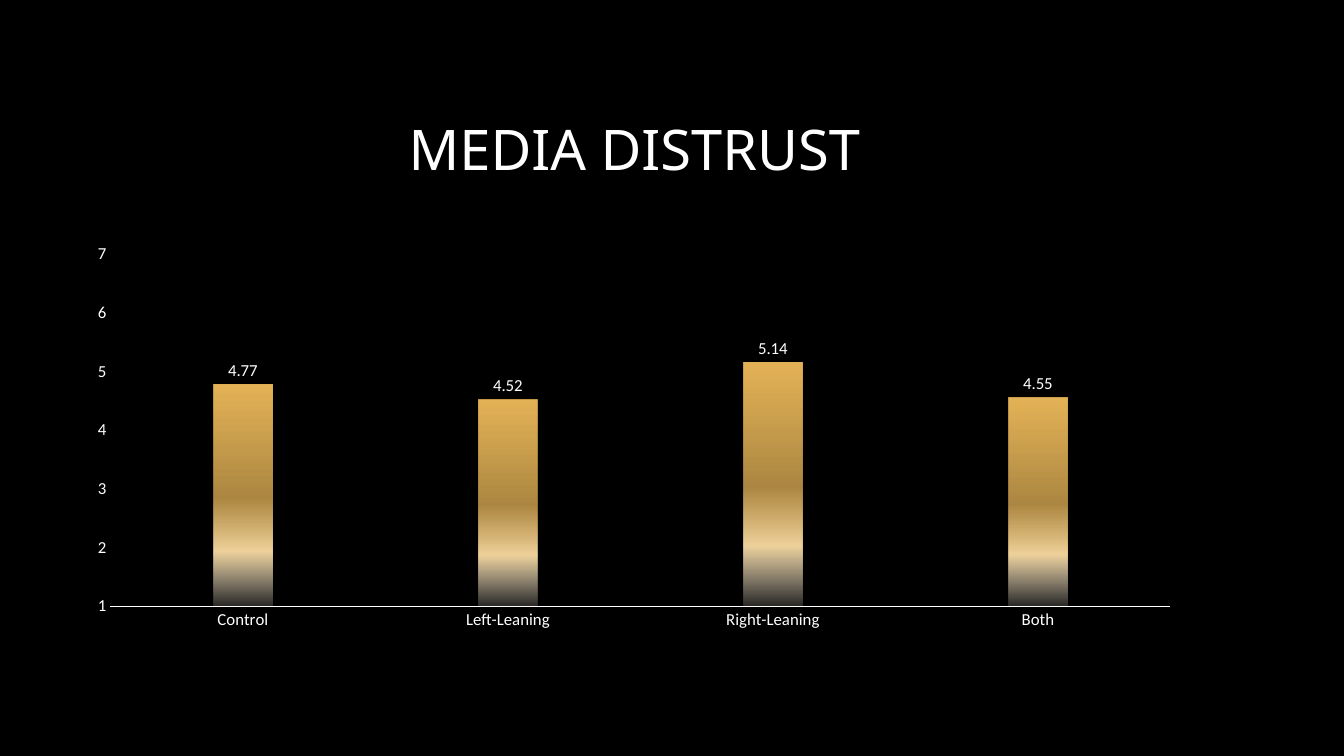
from pptx import Presentation
from pptx.chart.data import CategoryChartData
from pptx.dml.color import RGBColor
from pptx.enum.chart import XL_CHART_TYPE, XL_LABEL_POSITION, XL_TICK_MARK
from pptx.enum.text import MSO_ANCHOR, PP_ALIGN
from pptx.oxml import parse_xml
from pptx.util import Inches, Pt

WHITE = "FFFFFF"
DISTRUST = {"Control": 4.77, "Left-Leaning": 4.52, "Right-Leaning": 5.14, "Both": 4.55}
# Position, colour and opacity, all but the colour in percent
GOLD_STOPS = [(0, "E5B458", 100), (51, "E5B458", 75), (75, "EFD29B", 100), (100, "FAF0DE", 15)]
DRAWING = "http://schemas.openxmlformats.org/drawingml/2006/main"


def color(hex_string):
    return RGBColor.from_string(hex_string)


def style_font(font, name, size):
    font.name = name
    font.size = Pt(size)
    font.color.rgb = color(WHITE)


def fill_with_gradient(fill_format, stops):
    """Fill from top to bottom with stops that may be transparent."""
    fill_format.gradient()
    fill_format.gradient_angle = 270
    first_stop = fill_format.gradient_stops[0]
    first_stop.color.rgb = color(stops[0][1])
    stop_list = fill_format._fill._gradFill.gsLst
    for old_stop in list(stop_list):
        stop_list.remove(old_stop)
    for position, hex_string, opacity in stops:
        stop_list.append(parse_xml(
            f'<a:gs xmlns:a="{DRAWING}" pos="{position * 1000}"><a:srgbClr val="{hex_string}">'
            f'<a:alpha val="{opacity * 1000}"/></a:srgbClr></a:gs>'))


def add_title(slide, box, text):
    text_frame = slide.shapes.add_textbox(*box).text_frame
    text_frame.word_wrap = True
    text_frame.vertical_anchor = MSO_ANCHOR.MIDDLE
    paragraph = text_frame.paragraphs[0]
    paragraph.text = text
    paragraph.alignment = PP_ALIGN.CENTER
    style_font(paragraph.font, "Noto Sans", 40)


def style_axes(chart):
    for axis in (chart.category_axis, chart.value_axis):
        axis.major_tick_mark = axis.minor_tick_mark = XL_TICK_MARK.NONE
        axis.has_major_gridlines = False
        style_font(axis.tick_labels.font, "Calibri", 12)
    category_line = chart.category_axis.format.line
    category_line.color.rgb = color(WHITE)
    category_line.width = Pt(0.75)
    value_axis = chart.value_axis
    value_axis.format.line.fill.background()
    value_axis.minimum_scale, value_axis.maximum_scale = 1, 7
    value_axis.major_unit = 1
    value_axis.tick_labels.number_format = "0"
    value_axis.tick_labels.number_format_is_linked = False


def add_column_chart(slide, box, values):
    chart_data = CategoryChartData()
    chart_data.categories = values.keys()
    chart_data.add_series("Series 1", values.values())
    chart = slide.shapes.add_chart(XL_CHART_TYPE.COLUMN_CLUSTERED, *box, chart_data).chart
    chart.has_title = chart.has_legend = False
    style_font(chart.font, "Calibri", 10)
    style_axes(chart)

    plot = chart.plots[0]
    plot.vary_by_categories = False
    plot.gap_width, plot.overlap = 355, -70
    fill_with_gradient(plot.series[0].format.fill, GOLD_STOPS)
    plot.has_data_labels = True
    labels = plot.data_labels
    labels.show_value = True
    labels.position = XL_LABEL_POSITION.OUTSIDE_END
    labels.number_format = "0.00"
    labels.number_format_is_linked = False
    style_font(labels.font, "Calibri", 12)


def main():
    presentation = Presentation()
    presentation.slide_width, presentation.slide_height = Inches(13.33), Inches(7.5)
    slide = presentation.slides.add_slide(presentation.slide_layouts[6])
    background = slide.background.fill
    background.solid()
    background.fore_color.rgb = color("000000")

    left, width = Inches(0.75), Inches(11.08)
    add_title(slide, (left, Inches(0.67), width, Inches(1.59)), "MEDIA DISTRUST")
    add_column_chart(slide, (left, Inches(2.34), width, Inches(3.99)), DISTRUST)
    presentation.save("out.pptx")


if __name__ == "__main__":
    main()
